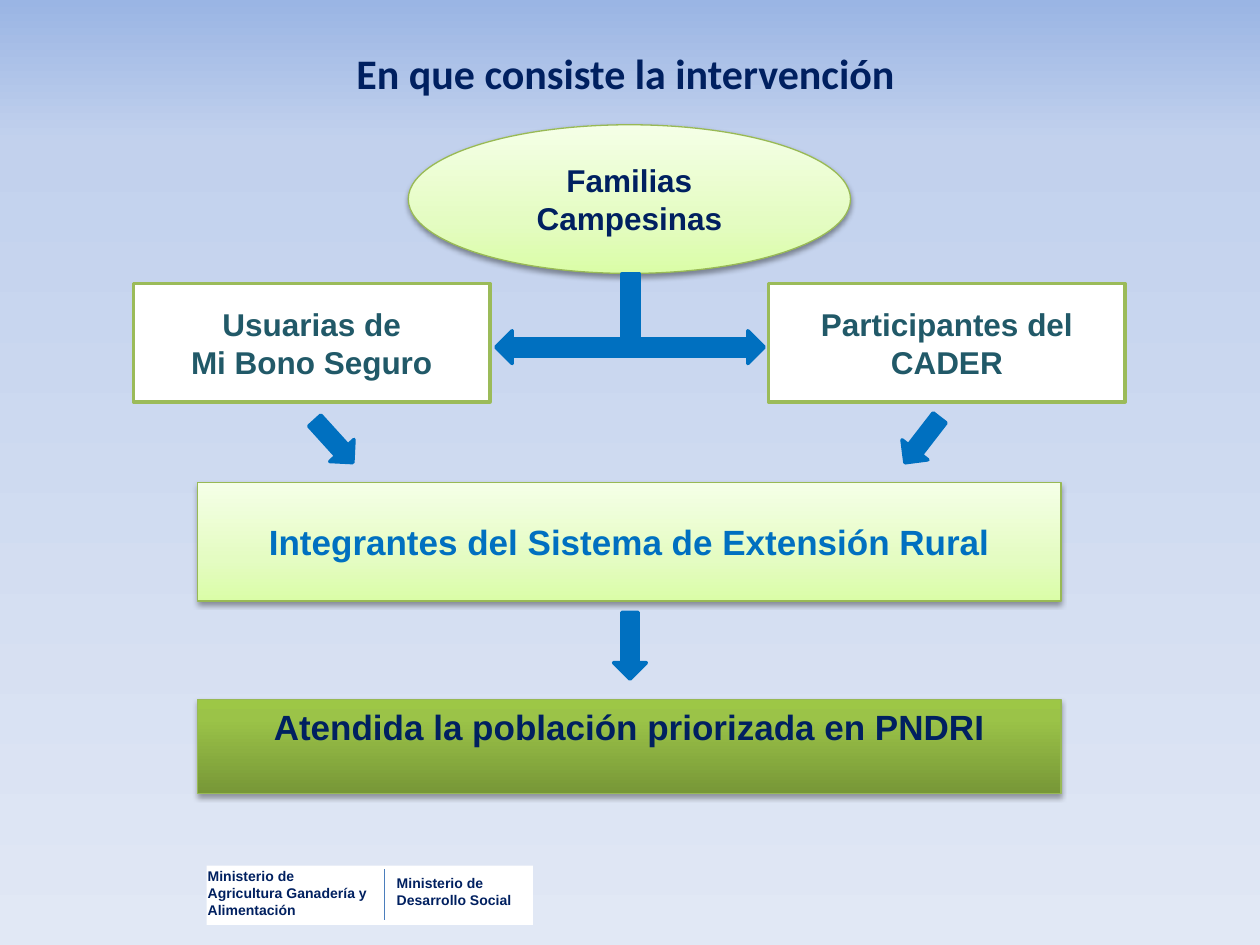
from pptx import Presentation
from pptx.dml.color import RGBColor
from pptx.enum.shapes import MSO_CONNECTOR, MSO_SHAPE
from pptx.enum.text import MSO_ANCHOR, MSO_AUTO_SIZE, PP_ALIGN
from pptx.oxml import parse_xml
from pptx.oxml.ns import nsdecls, qn
from pptx.util import Inches, Pt

RECT, OVAL, ARROW = MSO_SHAPE.RECTANGLE, MSO_SHAPE.OVAL, MSO_SHAPE.DOWN_ARROW
TOP, MIDDLE = MSO_ANCHOR.TOP, MSO_ANCHOR.MIDDLE
LEFT, CENTER = PP_ALIGN.LEFT, PP_ALIGN.CENTER

THEME = {
    "navy": RGBColor.from_string("002060"),
    "teal": RGBColor.from_string("215968"),
    "blue": RGBColor.from_string("0070C0"),
    "white": RGBColor.from_string("FFFFFF"),
    "frame": RGBColor.from_string("9BBB59"),
    "edge": RGBColor.from_string("98B955"),
    "divider": RGBColor.from_string("4B7EBC"),
    "sky": [(0, "9AB5E4"), (15, "C2D1ED"), (100, "E1E8F5")],
    "lime": [(0, "DAFDA7"), (35, "E4FCC2"), (100, "F5FFE7")],
    "green": [(0, "779737"), (80, "9BC348"), (100, "9DC746")],
    "title": 24, "group": 18, "result": 20, "footer": 8,
    "heading font": "Calibri", "font": "Arial",
}


def set_gradient(fill, element, stops, angle):
    fill.gradient()
    fill.gradient_angle = angle
    stop_list = element.find(".//" + qn("a:gsLst"))
    for stop in list(stop_list):
        stop_list.remove(stop)
    for position, color in stops:
        stop_list.append(parse_xml(
            f'<a:gs {nsdecls("a")} pos="{position * 1000}"><a:srgbClr val="{color}"/></a:gs>'))


def write(box, lines, size, color, align=CENTER, anchor=MIDDLE, font=THEME["font"]):
    frame = box.text_frame
    frame.word_wrap = True
    frame.vertical_anchor = anchor
    for index, line in enumerate(lines):
        para = frame.add_paragraph() if index else frame.paragraphs[0]
        para.alignment = align
        span = para.add_run()
        span.text = line
        span.font.name = font
        span.font.size = Pt(size)
        span.font.bold = True
        span.font.color.rgb = color


deck = Presentation()
deck.slide_width, deck.slide_height = Inches(10), Inches(7.5)
page = deck.slides.add_slide(deck.slide_layouts[5])
set_gradient(page.background.fill, page.element, THEME["sky"], 270)

# Title
title = page.shapes.title
title.left, title.top = Inches(2.34), Inches(0.33)
title.width, title.height = Inches(5.25), Inches(0.45)
write(title, ["En que consiste la intervención"], THEME["title"], THEME["navy"],
      font=THEME["heading font"])
title.text_frame.word_wrap = False
title.text_frame.auto_size = MSO_AUTO_SIZE.NONE
title.text_frame.margin_bottom = 0

# Shaded stages: families, extension system, population served
stages = [
    (OVAL, (3.24, 0.99, 3.51, 1.18), "lime", 38, "Familias Campesinas", "group", "navy", MIDDLE),
    (RECT, (1.57, 3.83, 6.85, 0.94), "lime", 38,
     "Integrantes del Sistema de Extensión Rural", "result", "blue", MIDDLE),
    (RECT, (1.57, 5.55, 6.85, 0.75), "green", 35,
     "Atendida la población priorizada en PNDRI", "result", "navy", TOP),
]
for kind, place, stops, opacity, text, size, color, anchor in stages:
    stage = page.shapes.add_shape(kind, *map(Inches, place))
    set_gradient(stage.fill, stage.element, THEME[stops], 90)
    stage.line.color.rgb = THEME["edge"]
    stage.line.width = Pt(0.75)
    stage.shadow.inherit = False
    stage.element.spPr.find(qn("a:effectLst")).append(parse_xml(
        f'<a:outerShdw {nsdecls("a")} blurRad="{Pt(3.1)}" dist="{Pt(1.7)}" dir="5400000" '
        f'rotWithShape="0"><a:srgbClr val="000000"><a:alpha val="{opacity * 1000}"/>'
        '</a:srgbClr></a:outerShdw>'))
    write(stage, [text], THEME[size], THEME[color], anchor=anchor)

# Two groups of families
groups = [(1.06, ["Usuarias de", "Mi Bono Seguro"]), (6.1, ["Participantes del CADER"])]
for left, lines in groups:
    group = page.shapes.add_shape(RECT, Inches(left), Inches(2.25), Inches(2.83), Inches(0.94))
    group.fill.solid()
    group.fill.fore_color.rgb = THEME["white"]
    group.line.color.rgb = THEME["frame"]
    group.line.width = Pt(2)
    group.shadow.inherit = False
    write(group, lines, THEME["group"], THEME["teal"])

# Blue bars and arrows
flow = [
    (ARROW, (4.03, 2.53, 0.26, 0.45), 90),
    (RECT, (4.06, 2.69, 1.89, 0.14), 0),
    (ARROW, (5.71, 2.53, 0.26, 0.45), 270),
    (RECT, (4.68, 2.43, 0.65, 0.14), 90),
    (ARROW, (4.87, 4.86, 0.26, 0.53), 0),
    (ARROW, (7.19, 3.27, 0.26, 0.45), 37.7),
    (ARROW, (2.52, 3.28, 0.26, 0.45), 317.8),
]
for kind, place, turn in flow:
    piece = page.shapes.add_shape(kind, *map(Inches, place))
    piece.rotation = turn
    piece.fill.solid()
    piece.fill.fore_color.rgb = THEME["blue"]
    piece.line.color.rgb = THEME["blue"]
    piece.line.width = Pt(2)
    piece.shadow.inherit = False

# Ministries footer
panel = page.shapes.add_shape(RECT, Inches(1.64), Inches(6.87), Inches(2.59), Inches(0.47))
panel.fill.solid()
panel.fill.fore_color.rgb = THEME["white"]
panel.line.fill.background()
panel.shadow.inherit = False

ministries = [
    ((1.55, 6.87, 1.5, 0.43), ["Ministerio de Agricultura Ganadería y Alimentación"]),
    ((3.05, 6.86, 1.71, 0.43), ["Ministerio de", "Desarrollo Social"]),
]
for place, lines in ministries:
    ministry = page.shapes.add_textbox(*map(Inches, place))
    write(ministry, lines, THEME["footer"], THEME["navy"], align=LEFT)

divider = page.shapes.add_connector(
    MSO_CONNECTOR.STRAIGHT, Inches(3.05), Inches(7.3), Inches(3.05), Inches(6.9))
divider.line.color.rgb = THEME["divider"]
divider.line.width = Pt(0.75)
divider.element.spPr.append(parse_xml(f'<a:effectLst {nsdecls("a")}/>'))

deck.save("out.pptx")
